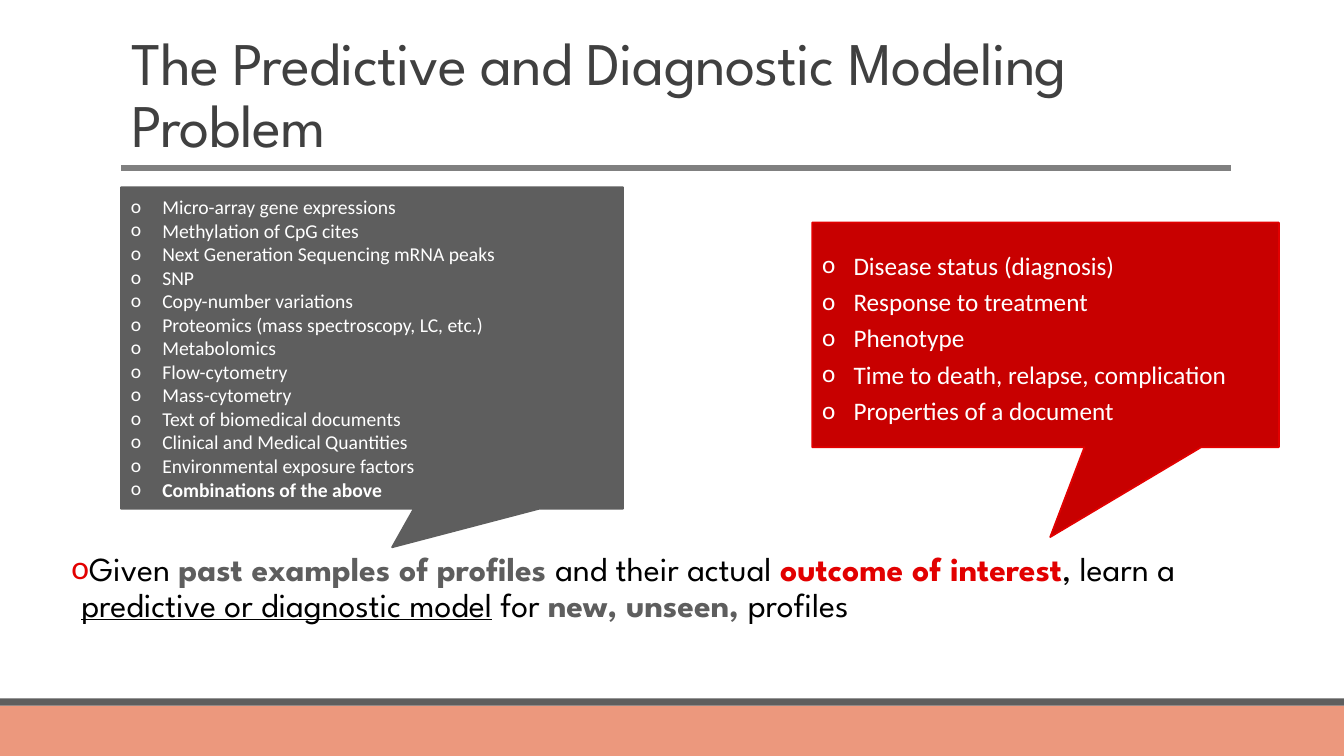
from lxml.etree import SubElement
from pptx import Presentation
from pptx.dml.color import RGBColor
from pptx.enum.shapes import MSO_CONNECTOR, MSO_SHAPE
from pptx.enum.text import MSO_ANCHOR, MSO_AUTO_SIZE, PP_ALIGN
from pptx.oxml.ns import qn
from pptx.util import Cm, Pt

WHITE = RGBColor(0xFF, 0xFF, 0xFF)
BLACK = RGBColor(0x00, 0x00, 0x00)
CHARCOAL = RGBColor(0x40, 0x40, 0x40)
SLATE = RGBColor(0x5E, 0x5E, 0x5E)
GRAY = RGBColor(0x80, 0x80, 0x80)
SALMON = RGBColor(0xEC, 0x98, 0x7D)
RED = RGBColor(0xE2, 0x00, 0x00)
DARK_RED = RGBColor(0xC8, 0x00, 0x00)

PROFILES = [
    "Micro-array gene expressions",
    "Methylation of CpG cites",
    "Next Generation Sequencing mRNA peaks",
    "SNP",
    "Copy-number variations",
    "Proteomics (mass spectroscopy, LC, etc.)",
    "Metabolomics",
    "Flow-cytometry",
    "Mass-cytometry",
    "Text of biomedical documents",
    "Clinical and Medical Quantities",
    "Environmental exposure factors",
    "Combinations of the above",
]
OUTCOMES = [
    "Disease status (diagnosis)",
    "Response to treatment",
    "Phenotype",
    "Time to death, relapse, complication",
    "Properties of a document",
]
STATEMENT = [
    ("Given ", BLACK, False, False),
    ("past examples of profiles ", SLATE, True, False),
    ("and their actual ", BLACK, False, False),
    ("outcome of interest", RED, True, False),
    (", learn a ", BLACK, False, False),
    ("predictive or diagnostic model", BLACK, False, True),
    (" for ", BLACK, False, False),
    ("new, unseen, ", SLATE, True, False),
    ("profiles", BLACK, False, False),
]


class SlideBuilder:
    """Holds the fonts and the current slide, and adds its elements."""

    heading_font = "League Spartan"
    list_font = "Calibri"

    def __init__(self, slide):
        self.slide = slide

    def place(self, element, box):
        element.left, element.top, element.width, element.height = map(Cm, box)

    def style(self, run, font, size, color, bold=False, underline=False):
        run.font.name = font
        run.font.size = Pt(size)
        run.font.color.rgb = color
        run.font.bold = bold
        run.font.underline = underline

    def bullet(self, paragraph, indent, color):
        properties = paragraph._p.get_or_add_pPr()
        properties.set("marL", str(Cm(indent)))
        properties.set("indent", str(-Cm(indent)))
        bullet_color = SubElement(properties, qn("a:buClr"))
        SubElement(bullet_color, qn("a:srgbClr"), val=str(color))
        SubElement(properties, qn("a:buFont"), typeface=self.list_font)
        SubElement(properties, qn("a:buChar"), char="o")

    def band(self, box, color):
        band = self.slide.shapes.add_shape(MSO_SHAPE.RECTANGLE, *map(Cm, box))
        band.shadow.inherit = False
        band.fill.solid()
        band.fill.fore_color.rgb = color
        band.line.fill.background()

    def rule(self, left, right, top, color, weight):
        rule = self.slide.shapes.add_connector(
            MSO_CONNECTOR.STRAIGHT, Cm(left), Cm(top), Cm(right), Cm(top))
        rule.line.color.rgb = color
        rule.line.width = Pt(weight)
        SubElement(rule._element.spPr, qn("a:effectLst"))

    def title(self, text, box):
        title = self.slide.shapes.title
        self.place(title, box)
        frame = title.text_frame
        frame.text = text
        frame.word_wrap = True
        frame.auto_size = MSO_AUTO_SIZE.NONE
        frame.vertical_anchor = MSO_ANCHOR.MIDDLE
        paragraph = frame.paragraphs[0]
        paragraph.alignment = PP_ALIGN.LEFT
        paragraph.line_spacing = 0.85
        run = paragraph.runs[0]
        self.style(run, self.heading_font, 43.2, CHARCOAL)
        run._r.get_or_add_rPr().set("spc", "-50")

    def body(self, parts, box):
        body = self.slide.placeholders[1]
        self.place(body, box)
        frame = body.text_frame
        frame.word_wrap = True
        frame.auto_size = MSO_AUTO_SIZE.NONE
        frame.margin_left = frame.margin_right = 0
        paragraph = frame.paragraphs[0]
        self.bullet(paragraph, 0.25, RED)
        paragraph.line_spacing = 0.9
        paragraph.space_before = Pt(0)
        for text, color, bold, underline in parts:
            run = paragraph.add_run()
            run.text = text
            self.style(run, self.heading_font, 24, color, bold, underline)

    def callout(self, items, box, tip, fill, outline, size, spacing, bold_item=None):
        callout = self.slide.shapes.add_shape(
            MSO_SHAPE.RECTANGULAR_CALLOUT, *map(Cm, box))
        callout.adjustments[0], callout.adjustments[1] = tip
        callout.shadow.inherit = False
        callout.fill.solid()
        callout.fill.fore_color.rgb = fill
        callout.line.color.rgb = outline
        callout.line.width = Pt(1.25)
        frame = callout.text_frame
        frame.text = "\n".join(items)
        frame.word_wrap = True
        frame.vertical_anchor = MSO_ANCHOR.MIDDLE
        for paragraph in frame.paragraphs:
            self.bullet(paragraph, 0.79, WHITE)
            paragraph.alignment = PP_ALIGN.LEFT
            paragraph.line_spacing = spacing
            for run in paragraph.runs:
                self.style(run, self.list_font, size, WHITE, run.text == bold_item)


def main():
    presentation = Presentation()
    presentation.slide_width = Cm(33.87)
    presentation.slide_height = Cm(19.05)
    builder = SlideBuilder(presentation.slides.add_slide(presentation.slide_layouts[1]))
    builder.band((0, 17.78, 33.87, 1.27), SALMON)
    builder.band((0, 17.6, 33.87, 0.18), SLATE)
    builder.rule(3.05, 31.01, 4.24, GRAY, 4.25)
    builder.title("The Predictive and Diagnostic Modeling Problem",
                  (3.05, 0.79, 27.94, 3.35))
    builder.callout(PROFILES, (3.05, 4.72, 12.65, 8.1), (0.04, 0.62),
                    SLATE, SLATE, 14, 1.0, bold_item=PROFILES[-1])
    builder.body(STATEMENT, (1.8, 13.79, 30.43, 1.98))
    builder.callout(OUTCOMES, (20.47, 5.61, 11.76, 5.66), (0.01, 0.9),
                    DARK_RED, RED, 18, 1.2)
    presentation.save("out.pptx")


if __name__ == "__main__":
    main()
